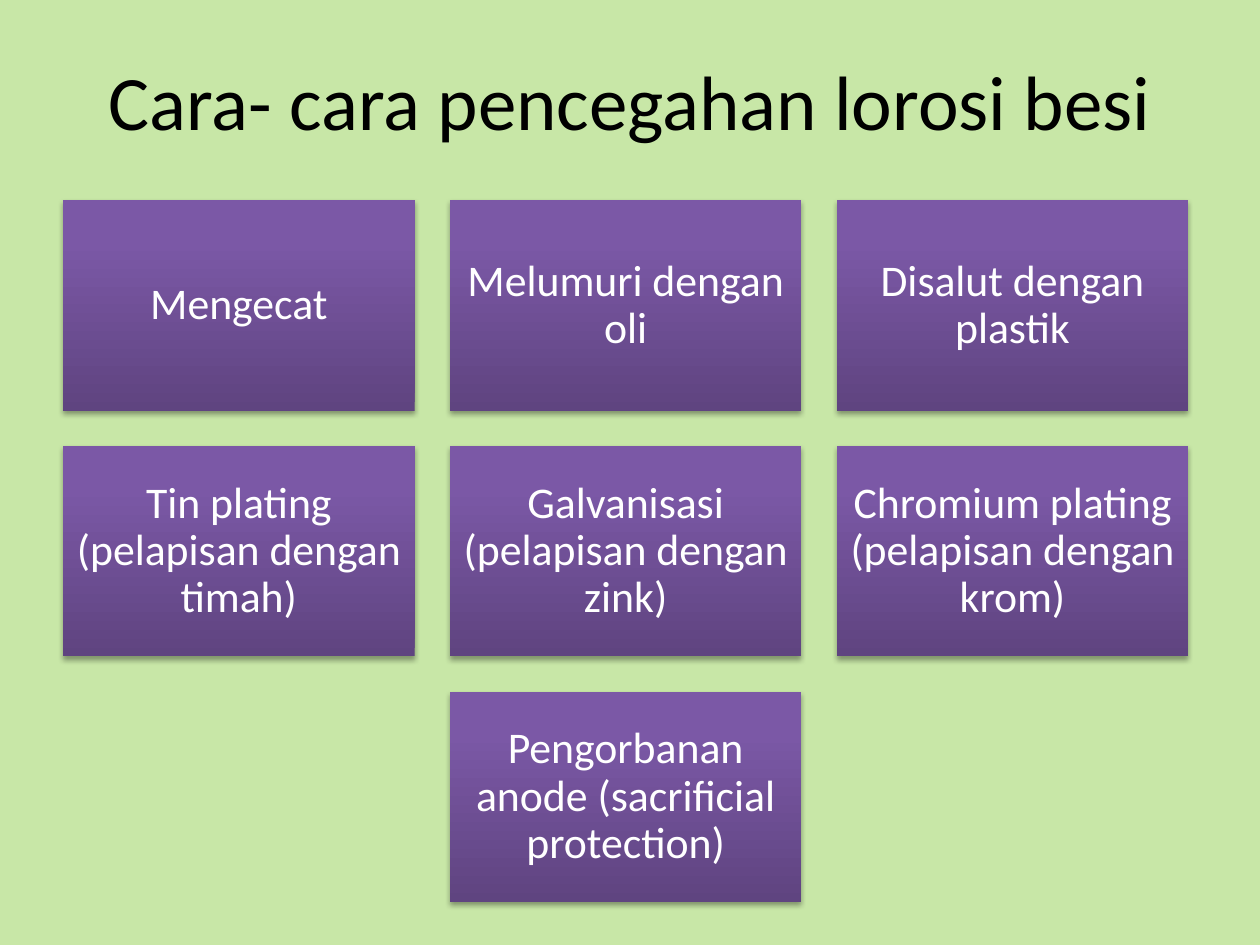
from copy import deepcopy

from lxml.etree import SubElement
from pptx import Presentation
from pptx.dml.color import RGBColor as RGB
from pptx.enum.shapes import MSO_SHAPE as SHAPE
from pptx.enum.text import MSO_ANCHOR as ANCHOR, PP_ALIGN as ALIGN
from pptx.oxml.ns import qn
from pptx.util import Inches, Pt

GREEN = RGB(0xC8, 0xE7, 0xA7)
BLACK = RGB(0, 0, 0)
WHITE = RGB(0xFF, 0xFF, 0xFF)
SHADES = [(0, RGB(0x5F, 0x44, 0x80)), (0.8, RGB(0x7B, 0x58, 0xA6)),
          (1, RGB(0x7C, 0x57, 0xA8))]

LEFT, TOP = 0.5, 1.59
WIDTH, HEIGHT = 2.79, 1.67
GAP = 0.28
STEP_X, STEP_Y = WIDTH + GAP, HEIGHT + GAP
COLS = 3
METHODS = [
    "Mengecat",
    "Melumuri dengan oli",
    "Disalut dengan plastik",
    "Tin plating (pelapisan dengan timah)",
    "Galvanisasi (pelapisan dengan zink)",
    "Chromium plating (pelapisan dengan krom)",
    "Pengorbanan anode (sacrificial protection)",
]


class Deck:
    font = "Calibri"

    def __init__(self):
        self.show = Presentation()
        self.show.slide_width, self.show.slide_height = Inches(10), Inches(7.5)
        self.slide = self.show.slides.add_slide(self.show.slide_layouts[5])
        back = self.slide.background.fill
        back.solid()
        back.fore_color.rgb = GREEN

    def label(self, frame, text, size, color):
        frame.text = text
        frame.word_wrap = True
        frame.vertical_anchor = ANCHOR.MIDDLE
        para = frame.paragraphs[0]
        para.alignment = ALIGN.CENTER
        font = para.runs[0].font
        font.name, font.size, font.color.rgb = self.font, Pt(size), color
        return para

    def title(self, text):
        head = self.slide.shapes.title
        head.left, head.top = Inches(0.5), Inches(0.17)
        head.width, head.height = Inches(9), Inches(1.25)
        self.label(head.text_frame, text, 44, BLACK)

    def shade(self, fill):
        """Blend the three purples from the bottom edge up."""
        fill.gradient()
        fill.gradient_angle = 90
        stops = fill._fill._gradFill.find(qn("a:gsLst"))
        stops.insert(1, deepcopy(stops[0]))
        for stop, (place, color) in zip(fill.gradient_stops, SHADES):
            stop.position, stop.color.rgb = place, color

    def shadow(self, shape):
        shape.shadow.inherit = False
        effects = shape._element.spPr.find(qn("a:effectLst"))
        outer = SubElement(effects, qn("a:outerShdw"), blurRad="40000",
                           dist="23000", dir="5400000", rotWithShape="0")
        tint = SubElement(outer, qn("a:srgbClr"), val=str(BLACK))
        SubElement(tint, qn("a:alpha"), val="35000")

    def card(self, text, left, top):
        card = self.slide.shapes.add_shape(
            SHAPE.RECTANGLE, Inches(left), Inches(top),
            Inches(WIDTH), Inches(HEIGHT))
        self.shade(card.fill)
        card.line.fill.background()
        self.shadow(card)
        frame = card.text_frame
        frame.margin_left = frame.margin_right = Inches(0.1)
        frame.margin_top = frame.margin_bottom = Inches(0.1)
        self.label(frame, text, 25, WHITE).line_spacing = 0.9

    def grid(self, texts):
        """Lay cards out in rows, with a short last row centred."""
        for start in range(0, len(texts), COLS):
            row = texts[start:start + COLS]
            shift = (COLS - len(row)) / 2
            top = TOP + start // COLS * STEP_Y
            for col, text in enumerate(row):
                self.card(text, LEFT + (col + shift) * STEP_X, top)


def main():
    deck = Deck()
    deck.title("Cara- cara pencegahan lorosi besi")
    deck.grid(METHODS)
    deck.show.save("out.pptx")


if __name__ == "__main__":
    main()
